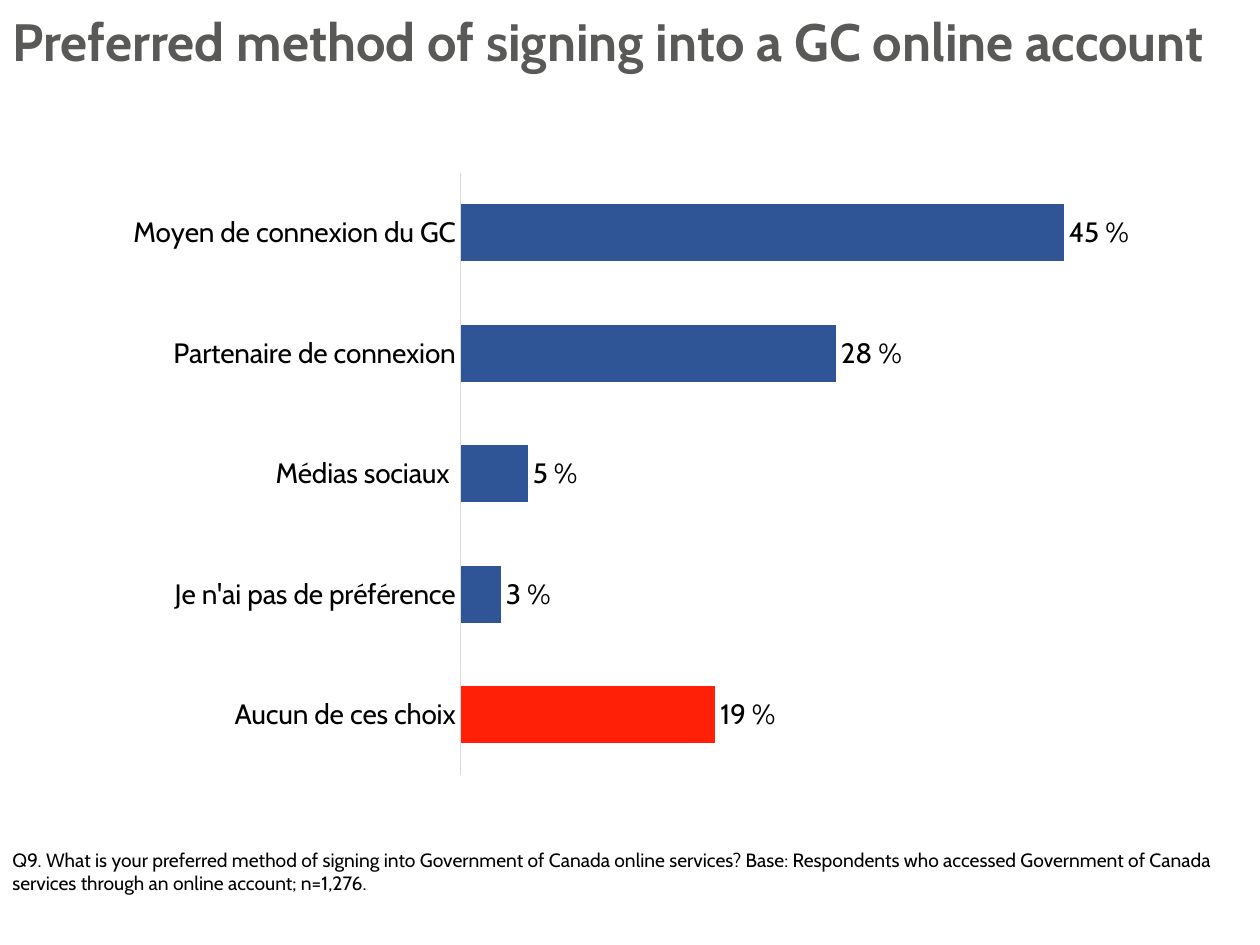
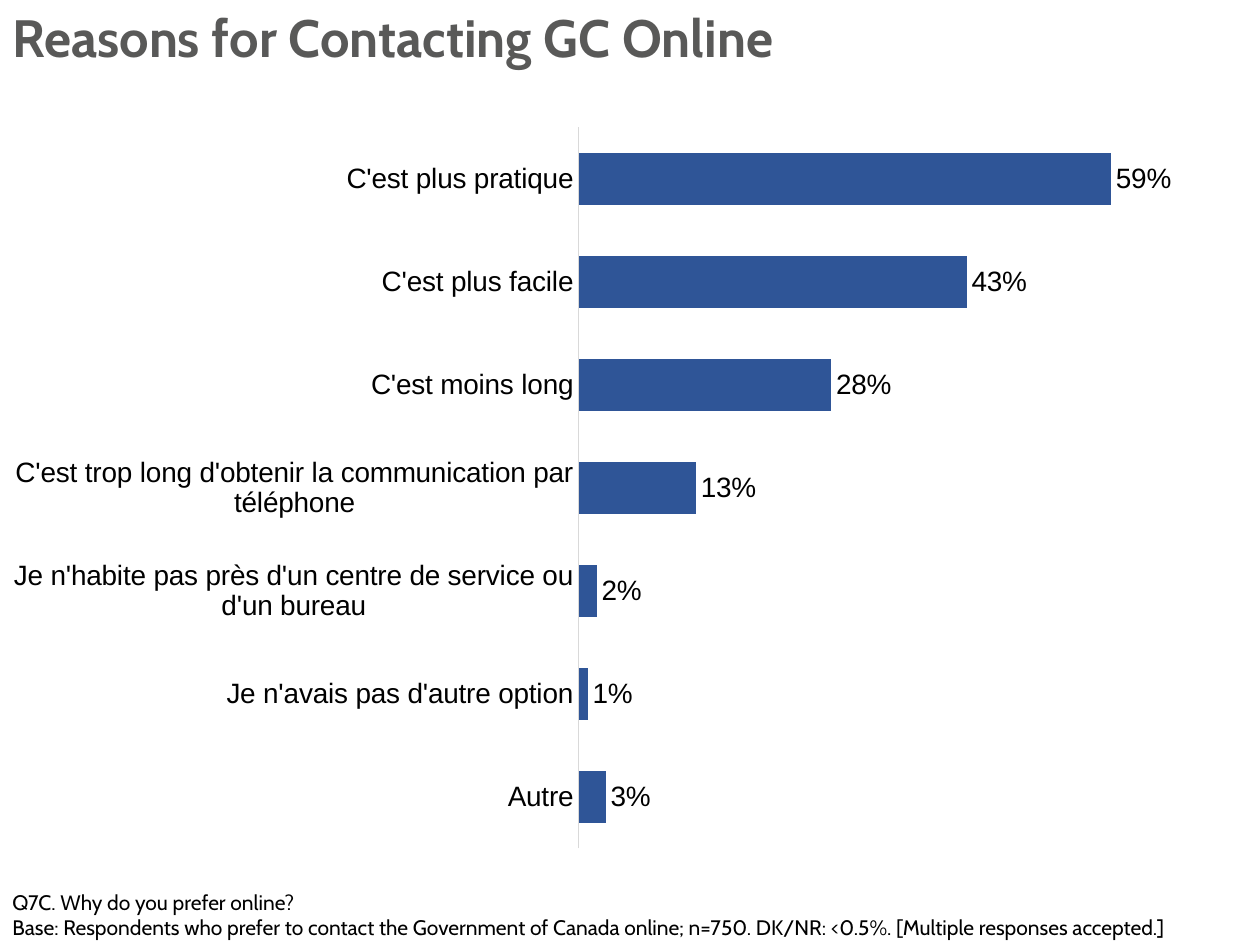
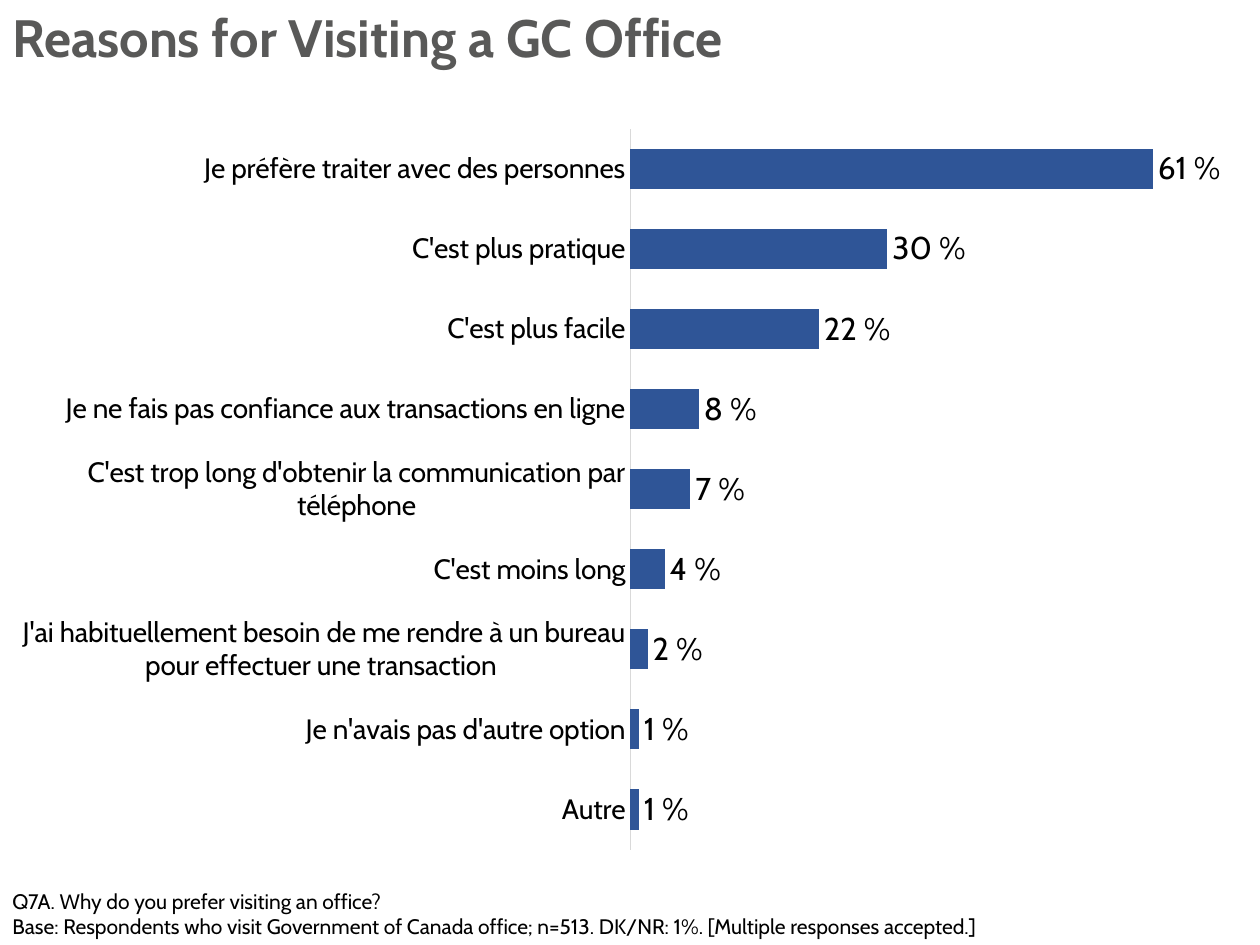
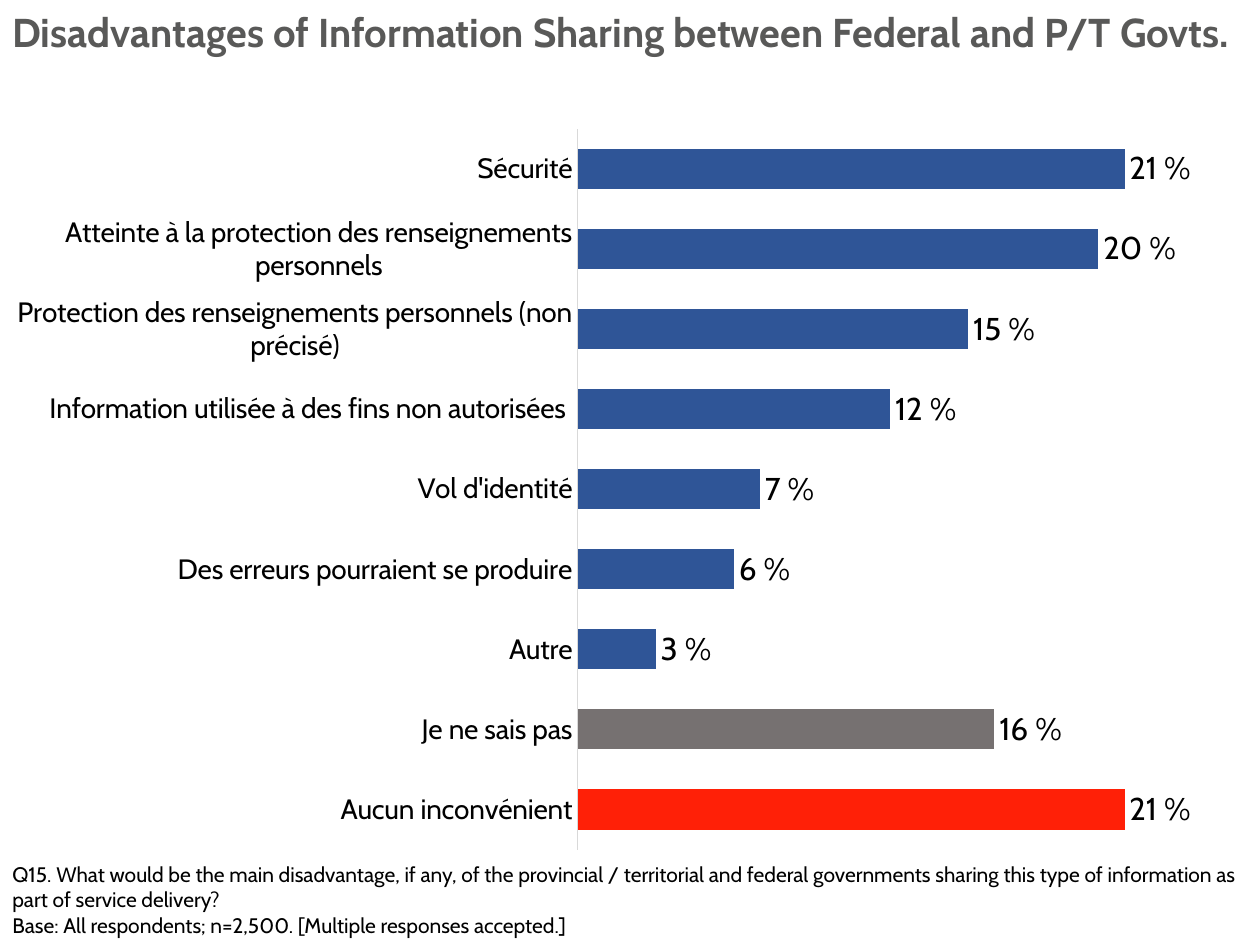
from lxml.etree import SubElement
from pptx import Presentation
from pptx.chart.data import CategoryChartData
from pptx.dml.color import RGBColor
from pptx.enum.chart import XL_CHART_TYPE, XL_LABEL_POSITION, XL_TICK_LABEL_POSITION, XL_TICK_MARK
from pptx.enum.text import MSO_ANCHOR, MSO_AUTO_SIZE
from pptx.oxml.ns import qn
from pptx.util import Inches, Pt

# Shared look
FONT = "Cabin"
TITLE_GREY, BLACK = "595958", "000000"
BLUE, RED, GREY, AXIS_GREY = "2F5597", "FF2007", "767171", "D9D9D9"
CHART_BOX = (0.11, 1.01, 9.77, 5.74)

# Content: bars run from bottom to top; "plot" holds fractions of the chart box
SLIDES = [
    {
        "title": "Preferred method of signing into a GC online account",
        "title_box": (0, 0.08, 10, 0.53),
        "bars": [
            ("Aucun de ces choix", 0.19, RED),
            ("Je n'ai pas de préférence", 0.03),
            ("Médias sociaux ", 0.05),
            ("Partenaire de connexion", 0.28),
            ("Moyen de connexion du GC", 0.45),
        ],
        "chart_box": (0, 0.72, 9.6, 5.46),
        "plot": (0.381, 0.119, 0.554, 0.876),
        "axis_max": 0.5,
        "gap": 112,
        "label_size": 16,
        "note": [
            "Q9. What is your preferred method of signing into Government of Canada online services? "
            "Base: Respondents who accessed Government of Canada services through an online account; n=1,276.",
        ],
        "note_box": (0, 6.68, 10, 0.47),
        "note_size": 11,
    },
    {
        "title": "Reasons for Contacting GC Online",
        "bars": [
            ("Autre", 0.03),
            ("Je n'avais pas d'autre option", 0.01),
            ("Je n'habite pas près d'un centre de service ou d'un bureau", 0.02),
            ("C'est trop long d'obtenir la communication par téléphone", 0.13),
            ("C'est moins long", 0.28),
            ("C'est plus facile", 0.43),
            ("C'est plus pratique", 0.59),
        ],
        "chart_box": (0.11, 1, 9.77, 5.74),
        "chart_font": "Arial",
        "plot": (0.458, 0.002, 0.514, 0.997),
        "axis_max": 0.7,
        "label_size": 16,
        "label_format": "0%",
        "note": [
            "Q7C. Why do you prefer online?",
            "Base: Respondents who prefer to contact the Government of Canada online; n=750. "
            "DK/NR: <0.5%. [Multiple responses accepted.]",
        ],
        "note_box": (0, 7.01, 10, 0.5),
    },
    {
        "title": "Reasons for Visiting a GC Office",
        "bars": [
            ("Autre", 0.01),
            ("Je n'avais pas d'autre option", 0.01),
            ("J'ai habituellement besoin de me rendre à un bureau pour effectuer une transaction ", 0.02),
            ("C'est moins long", 0.04),
            ("C'est trop long d'obtenir la communication par téléphone", 0.07),
            ("Je ne fais pas confiance aux transactions en ligne", 0.08),
            ("C'est plus facile", 0.22),
            ("C'est plus pratique", 0.3),
            ("Je préfère traiter avec des personnes", 0.61),
        ],
        "plot": (0.501, 0.002, 0.487, 0.997),
        "axis_max": 0.7,
        "note": [
            "Q7A. Why do you prefer visiting an office?",
            "Base: Respondents who visit Government of Canada office; n=513. "
            "DK/NR: 1%. [Multiple responses accepted.]",
        ],
        "note_box": (0, 7, 10, 0.5),
    },
    {
        "title": "Disadvantages of Information Sharing between Federal and P/T Govts.",
        "title_size": 23,
        "bars": [
            ("Aucun inconvénient", 0.21, RED),
            ("Je ne sais pas", 0.16, GREY),
            ("Autre", 0.03),
            ("Des erreurs pourraient se produire", 0.06),
            ("Vol d'identité", 0.07),
            ("Information utilisée à des fins non autorisées ", 0.12),
            ("Protection des renseignements personnels (non précisé)", 0.15),
            ("Atteinte à la protection des renseignements personnels", 0.2),
            ("Sécurité", 0.21),
        ],
        "plot": (0.458, 0.002, 0.529, 0.997),
        "axis_max": 0.25,
        "note": [
            "Q15. What would be the main disadvantage, if any, of the provincial / territorial and "
            "federal governments sharing this type of information as part of service delivery?",
            "Base: All respondents; n=2,500. [Multiple responses accepted.]",
        ],
        "note_box": (0, 6.79, 10, 0.71),
    },
]


def color(hex_value):
    return RGBColor.from_string(hex_value)


def set_values(target, values):
    for name, value in values.items():
        setattr(target, name, value)


def set_font(font, size, hex_value=BLACK, name=FONT, bold=False):
    set_values(font, {"name": name, "size": Pt(size), "bold": bold})
    font.color.rgb = color(hex_value)


def add_text(slide, box, lines, size, hex_value=BLACK, bold=False, line_spacing=None,
             auto_size=MSO_AUTO_SIZE.NONE):
    frame = slide.shapes.add_textbox(*map(Inches, box)).text_frame
    set_values(frame, {"word_wrap": True, "auto_size": auto_size, "vertical_anchor": MSO_ANCHOR.TOP})
    for index, line in enumerate(lines):
        paragraph = frame.paragraphs[0] if index == 0 else frame.add_paragraph()
        paragraph.line_spacing = line_spacing
        run = paragraph.add_run()
        run.text = line
        set_font(run.font, size, hex_value, bold=bold)


def place_plot(chart, fractions):
    """Fix the inner plot area inside the chart box."""
    plot_area = chart._chartSpace.chart.plotArea
    for old_layout in plot_area.findall(qn("c:layout")):
        plot_area.remove(old_layout)
    layout = SubElement(plot_area, qn("c:layout"))
    plot_area.insert(0, layout)
    manual = SubElement(layout, qn("c:manualLayout"))
    settings = [("layoutTarget", "inner"), ("xMode", "edge"), ("yMode", "edge")]
    for tag, value in settings + list(zip("xywh", fractions)):
        SubElement(manual, qn(f"c:{tag}")).set("val", str(value))


def add_bar_chart(slide, content):
    bars = content["bars"]
    font_name = content.get("chart_font", FONT)
    data = CategoryChartData(number_format="0%")
    data.categories = [bar[0] for bar in bars]
    data.add_series("Series 1", [bar[1] for bar in bars])
    box = map(Inches, content.get("chart_box", CHART_BOX))
    chart = slide.shapes.add_chart(XL_CHART_TYPE.BAR_CLUSTERED, *box, data).chart
    set_values(chart, {"has_legend": False, "has_title": False})
    set_font(chart.font, 16, name=font_name)
    place_plot(chart, content["plot"])

    # Axes
    set_values(chart.value_axis, {
        "visible": False, "has_major_gridlines": False,
        "minimum_scale": 0, "maximum_scale": content["axis_max"],
    })
    category_axis = chart.category_axis
    set_values(category_axis, {
        "major_tick_mark": XL_TICK_MARK.NONE, "minor_tick_mark": XL_TICK_MARK.NONE,
        "has_major_gridlines": False, "tick_label_position": XL_TICK_LABEL_POSITION.NEXT_TO_AXIS,
    })
    set_font(category_axis.tick_labels.font, 16, name=font_name)
    category_axis.format.line.color.rgb = color(AXIS_GREY)
    category_axis.format.line.width = Pt(0.75)

    # Bars and their labels
    plot = chart.plots[0]
    set_values(plot, {"gap_width": content.get("gap", 100), "vary_by_categories": False,
                      "has_data_labels": True})
    set_values(plot.data_labels, {
        "show_value": True, "position": XL_LABEL_POSITION.OUTSIDE_END,
        "number_format": content.get("label_format", "0 %"), "number_format_is_linked": False,
    })
    set_font(plot.data_labels.font, content.get("label_size", 18), name=font_name)
    series = plot.series[0]
    series.invert_if_negative = False
    fills = [(series, BLUE)]
    fills += [(series.points[index], bar[2]) for index, bar in enumerate(bars) if len(bar) > 2]
    for part, hex_value in fills:
        part.format.fill.solid()
        part.format.fill.fore_color.rgb = color(hex_value)


def main():
    presentation = Presentation()
    set_values(presentation, {"slide_width": Inches(10), "slide_height": Inches(7.5)})
    for content in SLIDES:
        slide = presentation.slides.add_slide(presentation.slide_layouts[6])
        add_bar_chart(slide, content)
        add_text(slide, content.get("title_box", (0, 0.05, 10, 0.55)), [content["title"]],
                 content.get("title_size", 30), TITLE_GREY, bold=True, line_spacing=0.9)
        add_text(slide, content["note_box"], content["note"], content.get("note_size", 12),
                 auto_size=MSO_AUTO_SIZE.SHAPE_TO_FIT_TEXT)
    presentation.save("out.pptx")


if __name__ == "__main__":
    main()
